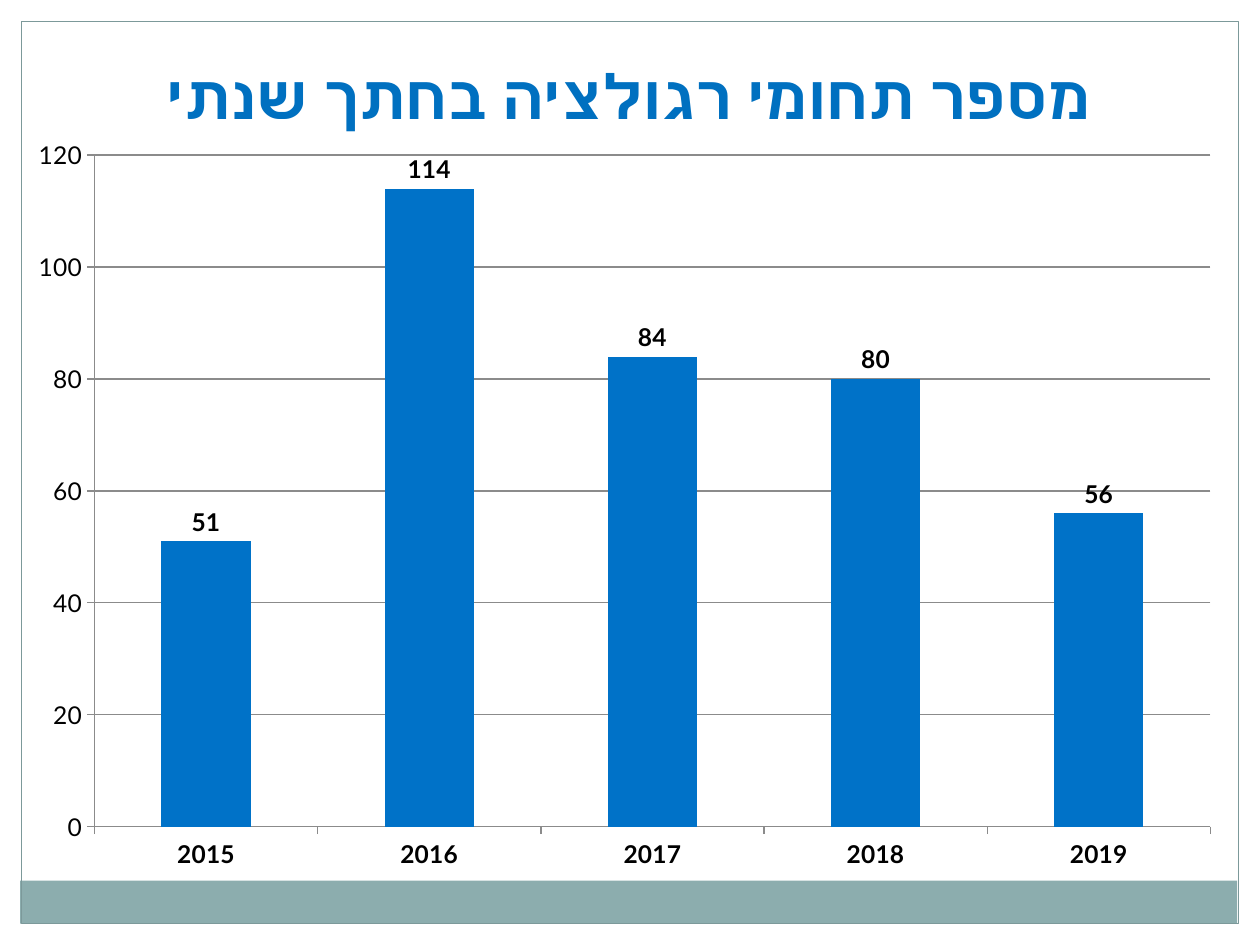
from lxml.etree import SubElement, fromstring
from pptx import Presentation
from pptx.chart.data import CategoryChartData
from pptx.dml.color import RGBColor
from pptx.enum.chart import XL_CHART_TYPE as ChartType, XL_LABEL_POSITION as LabelPos
from pptx.enum.chart import XL_TICK_MARK as Tick
from pptx.enum.shapes import MSO_SHAPE as Shape
from pptx.enum.text import MSO_ANCHOR as Anchor, PP_ALIGN as Align
from pptx.oxml.ns import nsdecls, qn
from pptx.util import Inches, Pt

# Content
FONT = "Lato"
TITLE = "מספר תחומי רגולציה בחתך שנתי"
AREAS = {"2015": 51, "2016": 114, "2017": 84, "2018": 80, "2019": 56}

# Frame parts: position, fill, line
FRAME = [
    ((0, 0, 10, 0.17), "FFFFFF", None),
    ((9.83, 0, 0.17, 7.5), "FFFFFF", None),
    ((0, 0, 0.17, 7.5), "FFFFFF", None),
    ((0.16, 6.99, 9.66, 0.34), "8CADAE", None),
    ((0.17, 0.17, 9.66, 7.16), None, "7C999A"),
]
TITLE_AT = (0.33, 0.32, 9.33, 0.87)
CHART_AT = (0.12, 0.99, 9.69, 6.03)
PLOT = {"x": 0.065, "y": 0.04, "w": 0.914, "h": 0.884}


def color(value):
    return RGBColor.from_string(value)


def place(position):
    return [Inches(length) for length in position]


def format_font(font, size, hue="000000", bold=False):
    values = {"name": FONT, "size": Pt(size), "bold": bold}
    for name, value in values.items():
        setattr(font, name, value)
    font.color.rgb = color(hue)


def add_frame(page):
    for position, fill, line in FRAME:
        box = page.shapes.add_shape(Shape.RECTANGLE, *place(position))
        box.shadow.inherit = False
        if fill:
            box.fill.solid()
            box.fill.fore_color.rgb = color(fill)
        else:
            box.fill.background()
        if line:
            box.line.color.rgb = color(line)
            box.line.width = Pt(0.75)
        else:
            box.line.fill.background()


def add_title(page):
    frame = page.shapes.add_textbox(*place(TITLE_AT)).text_frame
    frame.word_wrap = True
    frame.vertical_anchor = Anchor.MIDDLE
    para = frame.paragraphs[0]
    para.alignment = Align.CENTER
    span = para.add_run()
    span.text = TITLE
    format_font(span.font, 35.1, "0070C0", True)
    # Right-to-left reading with a matching complex-script font
    para._p.get_or_add_pPr().set("rtl", "1")
    SubElement(span._r.get_or_add_rPr(), qn("a:cs"), typeface=FONT)


def add_areas_chart(page):
    data = CategoryChartData()
    data.categories = list(AREAS)
    data.add_series("Series 1", list(AREAS.values()))
    chart = page.shapes.add_chart(
        ChartType.COLUMN_CLUSTERED, *place(CHART_AT), data).chart
    chart.has_title = False
    chart.has_legend = False
    format_font(chart.font, 10)

    # Columns and their values
    plot = chart.plots[0]
    plot.gap_width = 150
    plot.vary_by_categories = False
    bars = plot.series[0]
    bars.format.fill.solid()
    bars.format.fill.fore_color.rgb = color("0072C8")
    labels = bars.data_labels
    labels.show_value = True
    labels.position = LabelPos.OUTSIDE_END
    format_font(labels.font, 14, bold=True)

    # Axes and gridlines
    scale = chart.value_axis
    scale.minimum_scale, scale.maximum_scale, scale.major_unit = 0, 120, 20
    scale.has_major_gridlines = True
    for axis, bold in ((chart.category_axis, True), (scale, False)):
        axis.major_tick_mark = Tick.OUTSIDE
        axis.minor_tick_mark = Tick.NONE
        format_font(axis.tick_labels.font, 14, bold=bold)
    for part in (chart.category_axis, scale, scale.major_gridlines):
        part.format.line.color.rgb = color("8B8B8B")
        part.format.line.width = Pt(0.75)

    # Fixed inner plot area
    sizes = "".join(f'<c:{key} val="{value}"/>' for key, value in PLOT.items())
    layout = fromstring(
        f'<c:layout {nsdecls("c")}><c:manualLayout><c:layoutTarget val="inner"/>'
        f'<c:xMode val="edge"/><c:yMode val="edge"/>{sizes}'
        '</c:manualLayout></c:layout>')
    area = chart._chartSpace.find(".//" + qn("c:plotArea"))
    for old in area.findall(qn("c:layout")):
        area.remove(old)
    area.insert(0, layout)


def main():
    deck = Presentation()
    deck.slide_width, deck.slide_height = Inches(10), Inches(7.5)
    page = deck.slides.add_slide(deck.slide_layouts[6])
    add_frame(page)
    add_title(page)
    add_areas_chart(page)
    deck.save("out.pptx")


if __name__ == "__main__":
    main()
